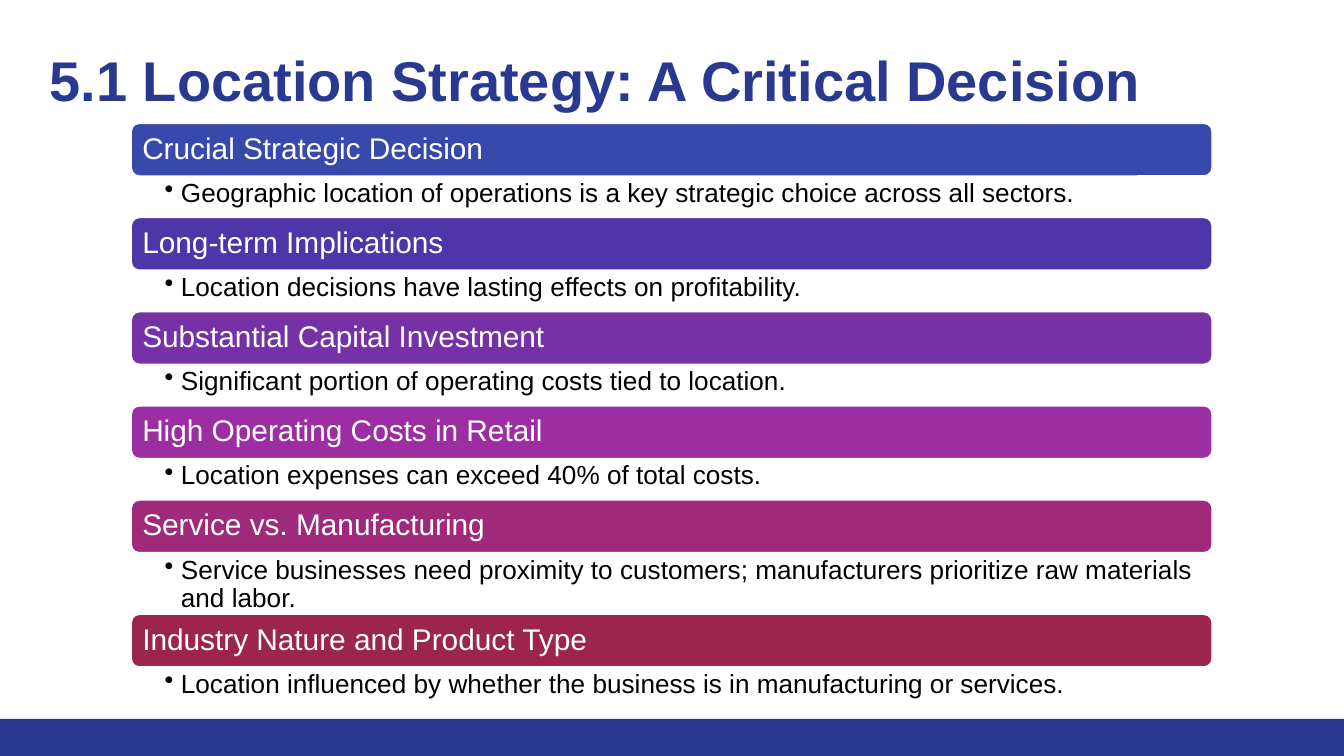
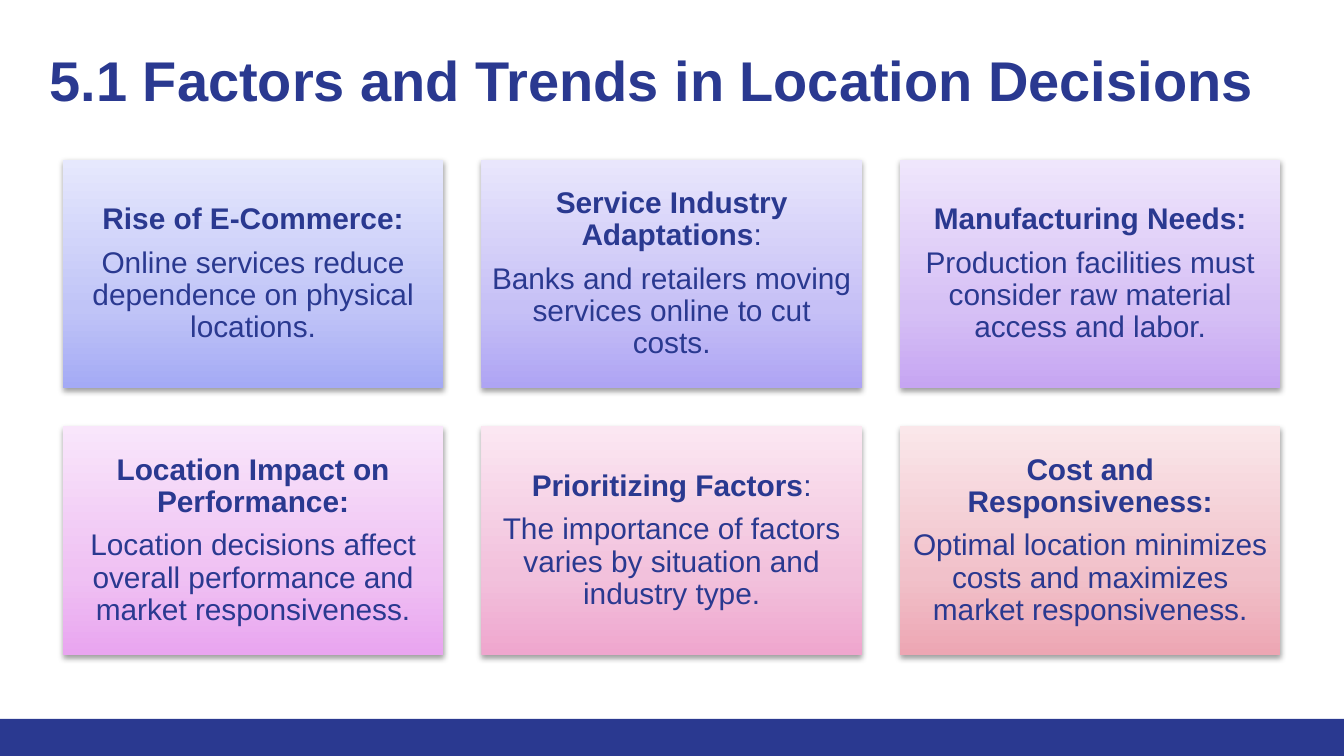
from copy import deepcopy

from lxml.etree import SubElement
from pptx import Presentation
from pptx.dml.color import RGBColor
from pptx.enum.shapes import MSO_SHAPE
from pptx.enum.text import MSO_ANCHOR, PP_ALIGN
from pptx.oxml.ns import qn
from pptx.util import Cm, Pt

# Shared style
FONT = "Arial"
NAVY = RGBColor(0x2A, 0x39, 0x90)
WHITE = RGBColor(0xFF, 0xFF, 0xFF)
BLACK = RGBColor(0x00, 0x00, 0x00)
SLIDE_WIDTH, SLIDE_HEIGHT = 25.4, 14.29
FOOTER_HEIGHT = 0.7

# Slide 1: bar colour, heading, detail, lines of detail
STRATEGY_TITLE = "5.1 Location Strategy: A Critical Decision"
STRATEGY_POINTS = [
    (RGBColor(0x39, 0x49, 0xAB), "Crucial Strategic Decision",
     "Geographic location of operations is a key strategic choice across all sectors.", 1),
    (RGBColor(0x4E, 0x35, 0xA8), "Long-term Implications",
     "Location decisions have lasting effects on profitability.", 1),
    (RGBColor(0x75, 0x31, 0xA5), "Substantial Capital Investment",
     "Significant portion of operating costs tied to location.", 1),
    (RGBColor(0x9C, 0x2D, 0xA2), "High Operating Costs in Retail",
     "Location expenses can exceed 40% of total costs.", 1),
    (RGBColor(0x9F, 0x29, 0x7B), "Service vs. Manufacturing",
     "Service businesses need proximity to customers; "
     "manufacturers prioritize raw materials and labor.", 2),
    (RGBColor(0x9C, 0x25, 0x4D), "Industry Nature and Product Type",
     "Location influenced by whether the business is in manufacturing or services.", 1),
]
POINT_LEFT, POINT_TOP, POINT_WIDTH = 2.46, 2.31, 20.47
BAR_HEIGHT = 1.04
DETAIL_HEIGHTS = {1: 0.74, 2: 1.12}

# Slide 2: heading, regular-weight ending, detail, gradient from bottom to top
FACTORS_TITLE = "5.1 Factors and Trends in Location Decisions"
FACTORS = [
    ("Rise of E-Commerce:", "",
     "Online services reduce dependence on physical locations.",
     (RGBColor(0xA4, 0xAA, 0xF5), RGBColor(0xC0, 0xC4, 0xF7), RGBColor(0xE6, 0xE8, 0xFD))),
    ("Service Industry Adaptations", ":",
     "Banks and retailers moving services online to cut costs.",
     (RGBColor(0xAE, 0xA4, 0xF4), RGBColor(0xC6, 0xC0, 0xF6), RGBColor(0xE9, 0xE6, 0xFC))),
    ("Manufacturing Needs:", "",
     "Production facilities must consider raw material access and labor.",
     (RGBColor(0xC6, 0xA5, 0xF2), RGBColor(0xD6, 0xC0, 0xF5), RGBColor(0xEF, 0xE6, 0xFC))),
    ("Location Impact on Performance:", "",
     "Location decisions affect overall performance and market responsiveness.",
     (RGBColor(0xE9, 0xA5, 0xF0), RGBColor(0xEF, 0xC1, 0xF3), RGBColor(0xF9, 0xE6, 0xFB))),
    ("Prioritizing Factors", ":",
     "The importance of factors varies by situation and industry type.",
     (RGBColor(0xEF, 0xA6, 0xCE), RGBColor(0xF2, 0xC1, 0xDC), RGBColor(0xFB, 0xE7, 0xF2))),
    ("Cost and Responsiveness:", "",
     "Optimal location minimizes costs and maximizes market responsiveness.",
     (RGBColor(0xED, 0xA6, 0xB3), RGBColor(0xF1, 0xC1, 0xCA), RGBColor(0xFA, 0xE7, 0xEA))),
]
GRADIENT_POSITIONS = (0, 0.35, 1)
CARD_COLUMNS = 3
CARD_LEFT, CARD_TOP = 1.19, 3.02
CARD_WIDTH, CARD_HEIGHT, CARD_GAP = 7.19, 4.32, 0.72


def write(frame, text, *, size, color, bold=False, ending="", align=PP_ALIGN.LEFT,
          spacing=0.9, after=0, bullet=False):
    """Add one paragraph; the ending is always in regular weight."""
    first = frame.paragraphs[0]
    paragraph = frame.add_paragraph() if first.runs else first
    if bullet:
        properties = paragraph._p.get_or_add_pPr()
        properties.set("marL", str(Cm(0.31)))
        properties.set("indent", str(-Cm(0.31)))
        SubElement(properties, qn("a:buChar")).set("char", "•")
    paragraph.alignment = align
    paragraph.line_spacing = spacing
    paragraph.space_after = Pt(after)
    for part, weight in ((text, bold), (ending, False)):
        if part:
            run = paragraph.add_run()
            run.text = part
            run.font.name = FONT
            run.font.size = Pt(size)
            run.font.bold = weight
            run.font.color.rgb = color


def prepare_frame(shape, insets, anchor):
    frame = shape.text_frame
    frame.word_wrap = True
    frame.vertical_anchor = anchor
    (frame.margin_left, frame.margin_top,
     frame.margin_right, frame.margin_bottom) = [Cm(inset) for inset in insets]
    return frame


def add_text_area(slide, place, insets):
    box = slide.shapes.add_textbox(*[Cm(length) for length in place])
    return prepare_frame(box, insets, MSO_ANCHOR.TOP)


def add_panel(slide, kind, place, fill=None):
    panel = slide.shapes.add_shape(kind, *[Cm(length) for length in place])
    panel.shadow.inherit = False
    panel.line.fill.background()
    if fill is not None:
        panel.fill.solid()
        panel.fill.fore_color.rgb = fill
    return panel


def add_base_slide(deck, title):
    slide = deck.slides.add_slide(deck.slide_layouts[6])
    add_panel(slide, MSO_SHAPE.RECTANGLE,
              (0, SLIDE_HEIGHT - FOOTER_HEIGHT, SLIDE_WIDTH, FOOTER_HEIGHT), NAVY)
    heading = add_text_area(slide, (0.69, 0.51, 24.08, 2.26), (0.25, 0.36, 0.25, 0.25))
    write(heading, title, size=30, color=NAVY, bold=True, spacing=1)
    return slide


def shade_upward(panel, colors):
    panel.fill.gradient()
    panel.fill.gradient_angle = 90
    stops = panel._element.spPr.find(qn("a:gradFill")).find(qn("a:gsLst"))
    stops.insert(1, deepcopy(stops[0]))
    for stop, position, color in zip(panel.fill.gradient_stops, GRADIENT_POSITIONS, colors):
        stop.position = position
        stop.color.rgb = color


def drop_shadow(panel):
    effects = panel._element.spPr.find(qn("a:effectLst"))
    shadow = SubElement(effects, qn("a:outerShdw"), blurRad=str(Pt(3.1)),
                        dist=str(Pt(1.6)), dir="5400000", rotWithShape="0")
    black = SubElement(shadow, qn("a:srgbClr"), val="000000")
    SubElement(black, qn("a:alpha"), val="38000")


def build_strategy(deck):
    slide = add_base_slide(deck, STRATEGY_TITLE)
    top = POINT_TOP
    for color, heading, detail, lines in STRATEGY_POINTS:
        # Heading bar
        bar = add_panel(slide, MSO_SHAPE.ROUNDED_RECTANGLE,
                        (POINT_LEFT, top, POINT_WIDTH, BAR_HEIGHT), color)
        bar.line.color.rgb = WHITE
        bar.line.width = Pt(2)
        write(prepare_frame(bar, (0.18,) * 4, MSO_ANCHOR.MIDDLE), heading,
              size=16, color=WHITE)
        top += BAR_HEIGHT

        # Bulleted detail
        height = DETAIL_HEIGHTS[lines]
        area = add_text_area(slide, (POINT_LEFT, top, POINT_WIDTH, height),
                             (0.65, 0.05, 0.28, 0.05))
        write(area, detail, size=14, color=BLACK, after=3, bullet=True)
        top += height


def build_factors(deck):
    slide = add_base_slide(deck, FACTORS_TITLE)
    for index, (heading, ending, detail, colors) in enumerate(FACTORS):
        row, column = divmod(index, CARD_COLUMNS)
        card = add_panel(slide, MSO_SHAPE.RECTANGLE,
                         (CARD_LEFT + column * (CARD_WIDTH + CARD_GAP),
                          CARD_TOP + row * (CARD_HEIGHT + CARD_GAP),
                          CARD_WIDTH, CARD_HEIGHT))
        shade_upward(card, colors)
        drop_shadow(card)
        frame = prepare_frame(card, (0.17,) * 4, MSO_ANCHOR.MIDDLE)
        style = dict(size=16, color=NAVY, align=PP_ALIGN.CENTER, after=6)
        write(frame, heading, bold=True, ending=ending, **style)
        write(frame, detail, **style)


def main():
    deck = Presentation()
    deck.slide_width, deck.slide_height = Cm(SLIDE_WIDTH), Cm(SLIDE_HEIGHT)
    build_strategy(deck)
    build_factors(deck)
    deck.save("out.pptx")


if __name__ == "__main__":
    main()
